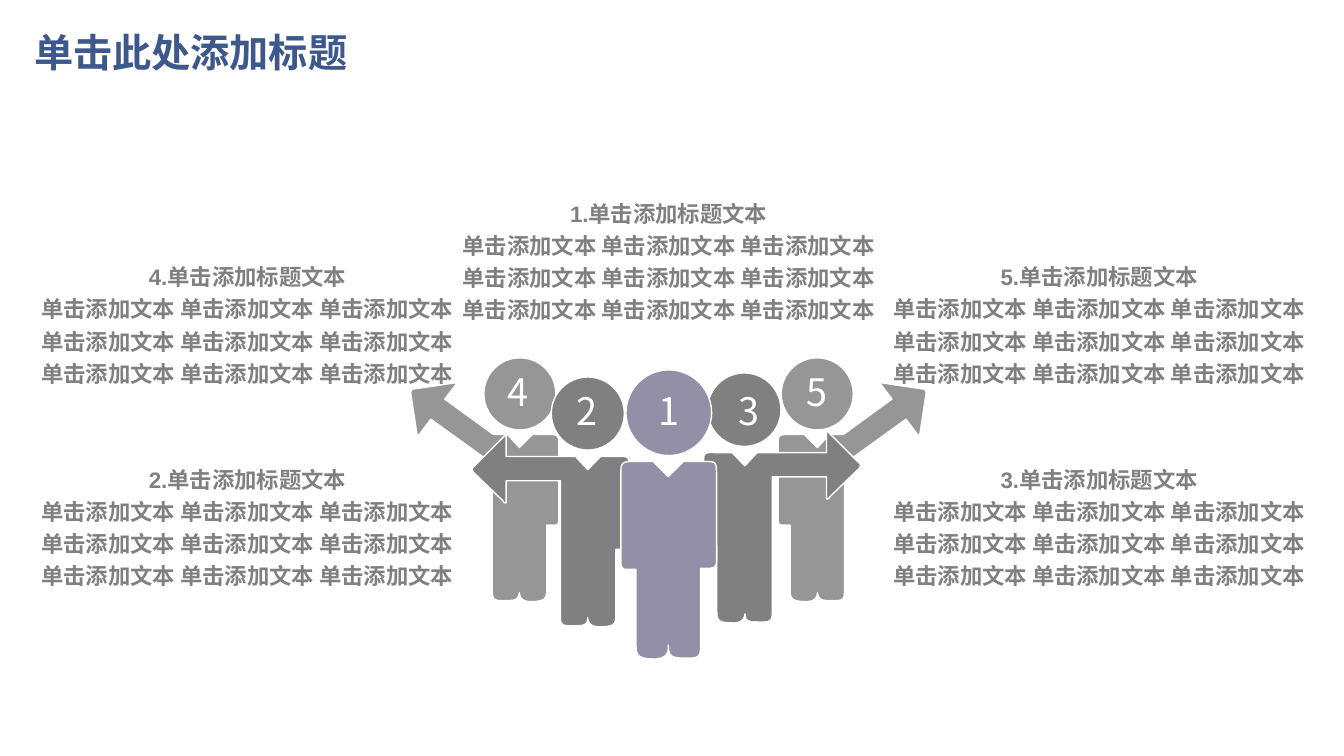
from pptx import Presentation
from pptx.dml.color import RGBColor
from pptx.enum.shapes import MSO_SHAPE
from pptx.enum.text import MSO_ANCHOR, MSO_AUTO_SIZE, PP_ALIGN
from pptx.util import Pt

ELLIPSE = MSO_SHAPE.OVAL
TOP, MIDDLE = MSO_ANCHOR.TOP, MSO_ANCHOR.MIDDLE
LEFT, CENTER = PP_ALIGN.LEFT, PP_ALIGN.CENTER
GROW, FIXED = MSO_AUTO_SIZE.SHAPE_TO_FIT_TEXT, MSO_AUTO_SIZE.NONE

COLORS = {
    "title": "3D588C", "caption": "808080", "white": "FFFFFF",
    "outer": "969696", "inner": "808080", "front": "938FA7",
}

TITLE = "单击此处添加标题"
CAPTION_HEADING = "单击添加标题文本"
CAPTION_LINE = " ".join(["单击添加文本"] * 3)
CAPTION_LINES = 3
CAPTION_SIZE = (319, 100.8)
CAPTIONS = [
    (5, 625.7, 179.3), (3, 625.7, 324), (4, 17.3, 179.3),
    (2, 17.3, 324), (1, 318.2, 133.9),
]

# Pairs are straight steps; six values are two control points and an end.
OUTLINES = {
    "outer": [
        (103.7, 4.3), (74.9, 0), (72.7, 0), (81.4, 11.5), (46.8, 36.7),
        (36.7, 36.7), (28.1, 46.1), (18.7, 36.7), (8.6, 36.7),
        (2.2, 36.7, 0, 36.7, 0, 41.8), (0, 94.3),
        (0, 100.1, 0, 101.5, 2.9, 101.5), (8.6, 101.5), (8.6, 148.3),
        (8.6, 154.1, 10.1, 156.2, 20.2, 156.2),
        (27.4, 156.2, 28.1, 151.9, 28.1, 149.8),
        (28.8, 154.8, 31, 155.5, 37.4, 155.5),
        (43.9, 155.5, 47.5, 156.2, 47.5, 149.8),
        (47.5, 57.6), (91.4, 25.9), (100.1, 37.4),
        (101.5, 36.7, 101.5, 36.7, 101.5, 35.3), (105.8, 7.2),
        (105.8, 5.8, 105.1, 4.3, 103.7, 4.3),
    ],
    "inner": [
        (110.9, 22.3), (90, 1.4), (89.3, 0.7, 88.6, 0, 87.8, 0),
        (87.8, 15.1), (38.2, 15.1), (29.5, 24.5), (20.2, 15.1), (8.6, 15.1),
        (2.9, 15.1, 0, 14.4, 0, 19.4), (0, 74.2),
        (0, 79.2, 0, 81.4, 2.9, 81.4), (9.4, 81.4), (9.4, 128.9),
        (9.4, 135.4, 10.8, 136.8, 21.6, 136.8),
        (28.1, 136.8, 29.5, 132.5, 29.5, 130.3),
        (29.5, 135.4, 31.7, 136.1, 38.9, 136.1),
        (44.6, 136.1, 49, 136.8, 49, 131),
        (49, 32.4), (87.8, 32.4), (87.8, 48.2),
        (89.3, 48.2, 89.3, 48.2, 90, 46.8), (110.9, 26.6),
        (112.3, 25.2, 112.3, 23, 110.9, 22.3),
    ],
    "front": [
        (33.8, 11.5), (44.6, 0.7), (61.9, 0.7),
        (68.4, 0.7, 68.4, 1.4, 68.4, 13.7), (68.4, 71.3),
        (68.4, 77.8, 65.5, 77, 56.9, 77), (56.9, 134.6),
        (56.9, 141.8, 52.6, 141.1, 45.4, 141.1),
        (36.7, 141.1, 33.8, 140.4, 33.8, 131.8),
        (33.8, 131.8, 36, 141.8, 24.5, 141.8),
        (13, 141.8, 10.8, 139.7, 10.8, 132.5), (10.8, 77.8), (4.3, 77.8),
        (0, 77.8, 0, 75.6, 0, 69.1), (0, 6.5),
        (0, 0, 4.3, 0.7, 10.8, 0.7), (23, 0.7),
    ],
}

PEOPLE = [
    {"row": "outer", "body": (555.8, 273.6), "facing": 1,
     "head": (558, 255.6, 51.5), "number": (5, 576, 263.5)},
    {"row": "outer", "body": (399.2, 273.6), "facing": -1,
     "head": (345.6, 255.6, 51.5), "number": (4, 362.2, 263.5)},
    {"row": "inner", "body": (449.3, 311), "facing": -1,
     "head": (393.8, 269.3, 52.2), "number": (2, 411.8, 277.2)},
    {"row": "inner", "body": (502.6, 308.2), "facing": 1,
     "head": (505.4, 266.4, 52.5), "number": (3, 527.8, 277.2)},
    {"row": "front", "body": (443.5, 329), "facing": 1,
     "head": (447.1, 264.2, 61.2), "number": (1, 470.2, 277.2)},
]
CURVE_STEPS = 6


def rgb(name):
    return RGBColor.from_string(COLORS[name])


def add_text(slide, lines, left, top, width, height, *, size, font, color,
             bold=False, align=LEFT, anchor=TOP, spacing=1.0,
             inset=(0, 0), wrap=False, fit=GROW):
    frame = slide.shapes.add_textbox(
        Pt(left), Pt(top), Pt(width), Pt(height)).text_frame
    frame.word_wrap = wrap
    frame.auto_size = fit
    frame.vertical_anchor = anchor
    frame.margin_left = frame.margin_right = Pt(inset[0])
    frame.margin_top = frame.margin_bottom = Pt(inset[1])
    for index, line in enumerate(lines):
        paragraph = frame.paragraphs[0] if index == 0 else frame.add_paragraph()
        paragraph.alignment = align
        paragraph.line_spacing = spacing
        run = paragraph.add_run()
        run.text = line
        run.font.size = Pt(size)
        run.font.name = font
        run.font.bold = bold
        run.font.color.rgb = rgb(color)


def trace(outline):
    points = [outline[0]]
    for step in outline[1:]:
        if len(step) == 2:
            points.append(step)
            continue
        controls = (points[-1], step[:2], step[2:4], step[4:])
        for i in range(1, CURVE_STEPS + 1):
            t = i / CURVE_STEPS
            weights = ((1 - t) ** 3, 3 * t * (1 - t) ** 2,
                       3 * t * t * (1 - t), t ** 3)
            points.append(tuple(
                sum(w * control[axis] for w, control in zip(weights, controls))
                for axis in (0, 1)))
    return points


def paint(shape, color):
    shape.shadow.inherit = False
    shape.fill.solid()
    shape.fill.fore_color.rgb = rgb(color)
    shape.line.color.rgb = rgb("white")
    shape.line.width = Pt(1)


def add_person(slide, person):
    x, y, diameter = person["head"]
    paint(slide.shapes.add_shape(
        ELLIPSE, Pt(x), Pt(y), Pt(diameter), Pt(diameter)), person["row"])
    left, top = person["body"]
    points = [(Pt(left + person["facing"] * dx), Pt(top + dy))
              for dx, dy in trace(OUTLINES[person["row"]])]
    body = slide.shapes.build_freeform(*points[0])
    body.add_line_segments(points[1:], close=True)
    paint(body.convert_to_shape(), person["row"])


def main():
    """Build the slide of five numbered people with their captions."""
    deck = Presentation()
    deck.slide_width, deck.slide_height = Pt(960), Pt(540)
    slide = deck.slides.add_slide(deck.slide_layouts[6])
    for person in PEOPLE:
        add_person(slide, person)
    for person in PEOPLE:
        number, left, top = person["number"]
        add_text(slide, [str(number)], left, top, 15.8, 32.4, size=27,
                 font="Noto Sans CJK SC", color="white")
    for number, left, top in CAPTIONS:
        lines = [f"{number}.{CAPTION_HEADING}"] + [CAPTION_LINE] * CAPTION_LINES
        add_text(slide, lines, left, top, *CAPTION_SIZE, size=16, font="Arial",
                 color="caption", bold=True, align=CENTER, spacing=1.2,
                 inset=(9.4, 5))
    add_text(slide, [TITLE], 17.3, 17.3, 828, 43.2, size=28, font="Montserrat",
             color="title", bold=True, anchor=MIDDLE, spacing=0.9,
             inset=(7.2, 3.6), wrap=True, fit=FIXED)
    deck.save("out.pptx")


if __name__ == "__main__":
    main()
